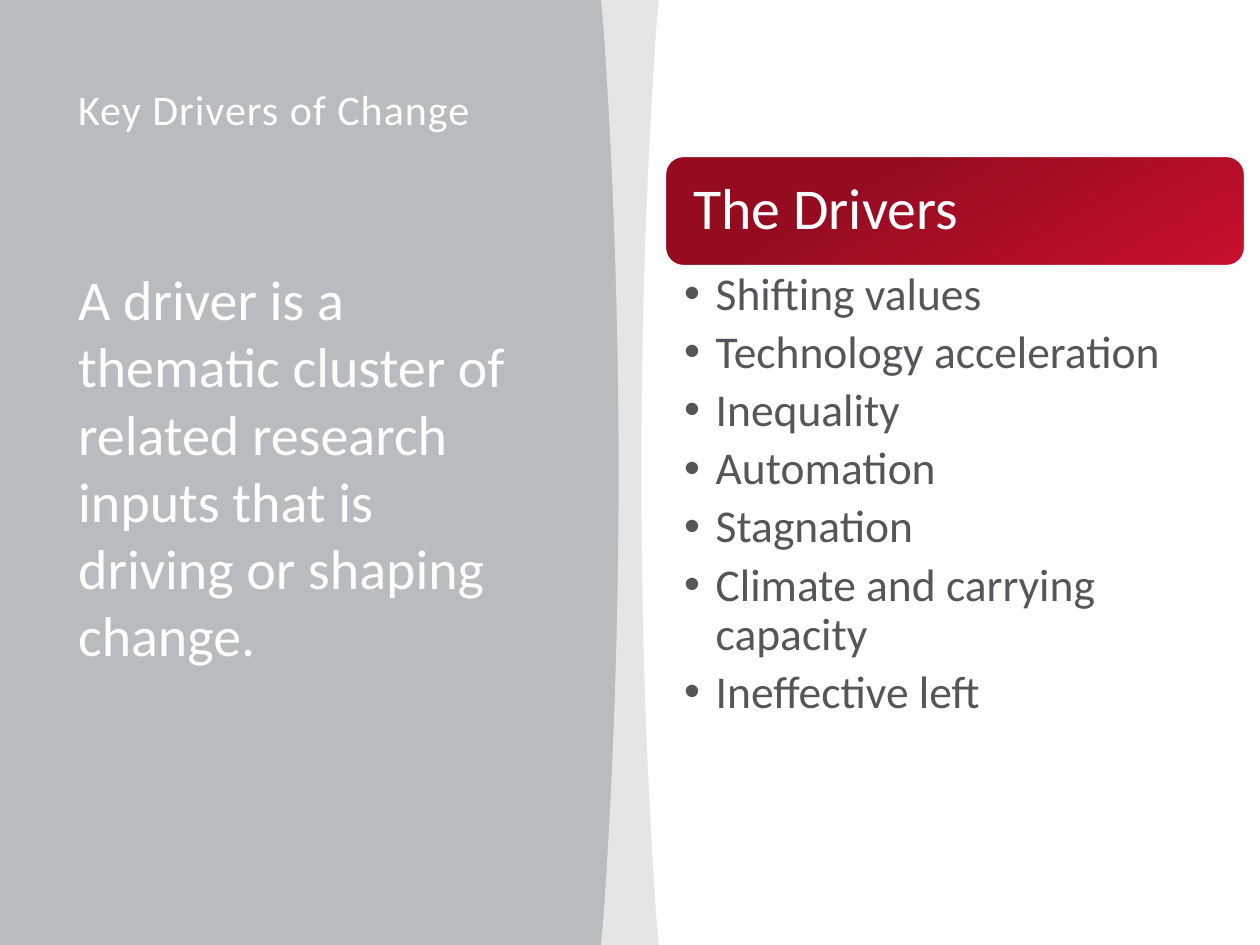
from lxml import etree
from pptx import Presentation
from pptx.dml.color import RGBColor
from pptx.enum.shapes import MSO_SHAPE
from pptx.enum.text import MSO_ANCHOR, MSO_AUTO_SIZE, PP_ALIGN
from pptx.oxml.ns import qn
from pptx.util import Inches, Pt

ROUND = MSO_SHAPE.ROUNDED_RECTANGLE
TOP, MIDDLE = MSO_ANCHOR.TOP, MSO_ANCHOR.MIDDLE
LEFT = PP_ALIGN.LEFT
FIXED = MSO_AUTO_SIZE.NONE

WIDTH, HEIGHT = 10, 7.5
FONT = "Calibri"
WHITE, GREY, RED, DARK = "FFFFFF", "53575A", "C8102E", "950C21"
TITLE = "Key Drivers of Change"
QUOTE = ("A driver is a thematic cluster of related research inputs "
         "that is driving or shaping change.")
HEADER = "The Drivers"
DRIVERS = [
    "Shifting values",
    "Technology acceleration",
    "Inequality",
    "Automation",
    "Stagnation",
    "Climate and carrying capacity",
    "Ineffective left",
]
# Middle of the curved edge, side it bends back to, colour
PANELS = [(4.91, -1, "E5E5E5"), (5.09, 1, WHITE)]
# Distance back from the middle of the edge, height down the slide
BOW = [(0.12, 0.21), (0.04, 1.37), (0, 2.55), (0, 3.75)]
STEPS = 24


def rgb(code):
    return RGBColor.from_string(code)


def curve(t):
    """Point on the upper half of the bowed edge."""
    weights = ((1 - t) ** 3, 3 * t * (1 - t) ** 2, 3 * t * t * (1 - t), t ** 3)
    return tuple(sum(w * p[i] for w, p in zip(weights, BOW)) for i in (0, 1))


def add_panel(slide, mid, side, color):
    upper = [(0.14, 0)] + [curve(i / STEPS) for i in range(STEPS + 1)]
    lower = [(back, HEIGHT - y) for back, y in reversed(upper[:-1])]
    edge = [(mid + side * back, y) for back, y in upper + lower]
    build = slide.shapes.build_freeform(Inches(WIDTH), 0, scale=1.0)
    points = edge + [(WIDTH, HEIGHT)]
    build.add_line_segments([(Inches(x), Inches(y)) for x, y in points])
    panel = build.convert_to_shape()
    panel.shadow.inherit = False
    panel.fill.solid()
    panel.fill.fore_color.rgb = rgb(color)
    panel.line.fill.background()
    return panel


def place(shape, left, top, width, height):
    shape.left, shape.top = Inches(left), Inches(top)
    shape.width, shape.height = Inches(width), Inches(height)


def write(shape, lines, size, color, anchor=TOP, inset=(0.1, 0.05, 0.1, 0.05),
          bullet=False, spacing=1.0, after=0):
    frame = shape.text_frame
    frame.text = "\n".join(lines)
    frame.word_wrap = True
    frame.auto_size = FIXED
    frame.vertical_anchor = anchor
    (frame.margin_left, frame.margin_top,
     frame.margin_right, frame.margin_bottom) = map(Inches, inset)
    for para in frame.paragraphs:
        props = para._p.get_or_add_pPr()
        indent = Inches(0.25) if bullet else 0
        props.set("marL", str(indent))
        props.set("indent", str(-indent))
        para.alignment = LEFT
        para.line_spacing = spacing
        para.space_before = Pt(0)
        para.space_after = Pt(after)
        if bullet:
            etree.SubElement(props, qn("a:buChar")).set("char", "•")
        else:
            etree.SubElement(props, qn("a:buNone"))
        for run in para.runs:
            run.font.name = FONT
            run.font.size = Pt(size)
            run.font.color.rgb = rgb(color)


def add_header(slide):
    box = slide.shapes.add_shape(ROUND, 0, 0, 0, 0)
    place(box, 5.28, 1.24, 4.6, 0.87)
    box.shadow.inherit = False
    box.fill.gradient()
    box.fill.gradient_angle = 120
    stops = box.fill.gradient_stops
    for stop, color, pos in zip(stops, (RED, DARK), (0, 0.69)):
        stop.color.rgb = rgb(color)
        stop.position = pos
    box.line.color.rgb = rgb(WHITE)
    box.line.width = Pt(1)
    write(box, [HEADER], 33, WHITE, MIDDLE, (0.18, 0.14, 0.18, 0.14),
          spacing=0.9)


def main():
    deck = Presentation()
    deck.slide_width, deck.slide_height = Inches(WIDTH), Inches(HEIGHT)
    slide = deck.slides.add_slide(deck.slide_layouts[3])
    slide.background.fill.solid()
    slide.background.fill.fore_color.rgb = rgb("B9BCBE")

    tree = slide.shapes._spTree
    for depth, panel in enumerate(PANELS, start=2):
        tree.insert(depth, add_panel(slide, *panel)._element)

    title, quote, drivers = slide.placeholders
    place(title, 0.52, 0.61, 3.89, 1.08)
    write(title, [TITLE], 24, WHITE)
    title.text_frame.paragraphs[0].runs[0].font._element.set("spc", "60")

    place(quote, 0.52, 2.05, 3.64, 3.33)
    write(quote, [QUOTE], 32, WHITE)

    place(drivers, 5.28, 2.1, 4.6, 3.81)
    write(drivers, DRIVERS, 26, GREY, inset=(0.15, 0.05, 0.26, 0.05),
          bullet=True, spacing=0.9, after=5.2)
    add_header(slide)
    deck.save("out.pptx")


if __name__ == "__main__":
    main()
